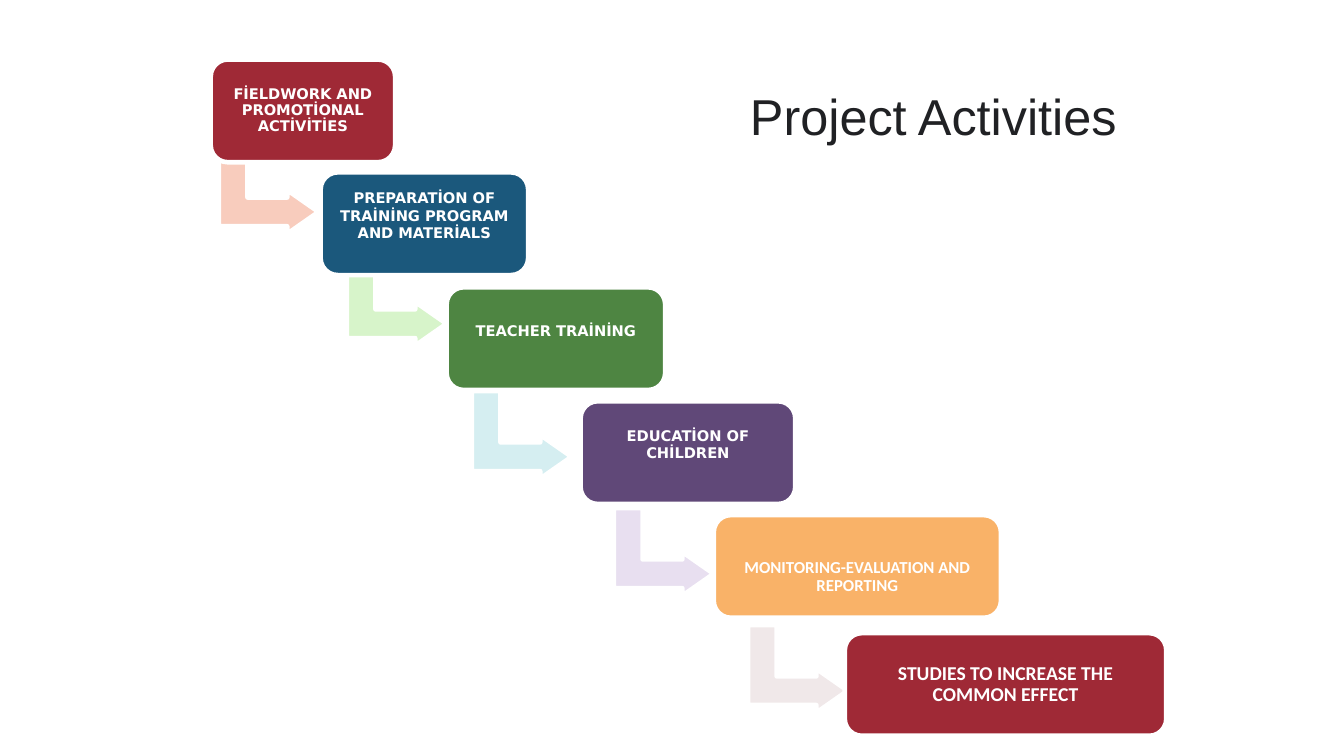
from pptx import Presentation
from pptx import util as u
from pptx.dml.color import RGBColor
from pptx.enum import shapes, text

COLORS = {
    "white": "FFFFFF", "title": "202124",
    "red": "9F2936", "blue": "1B587C", "green": "4E8542",
    "purple": "604878", "orange": "F9B268",
    "pale red": "F8CCBD", "pale green": "D7F4CA", "pale blue": "D5EEF1",
    "pale purple": "E8DFF0", "pale grey": "F0E8E9",
}
WIDE, NARROW = "DejaVu Sans", "Calibri"
STEP_HEIGHT = 73.4
ARROW_SIZE = (62.6, 71.3)

# label, fill, (left, top, width), (font, size, line spacing), extra inset (top, bottom)
STEPS = [
    ("FİELDWORK AND PROMOTİONAL ACTİVİTİES", "red",
     (150.5, 42.5, 131.8), (WIDE, 10.5, 0.9), (0, 0)),
    ("PREPARATİON OF TRAİNİNG PROGRAM AND MATERİALS", "blue",
     (229, 123.1, 148.3), (WIDE, 10.5, 1), (0, 12)),
    ("TEACHER TRAİNİNG", "green",
     (319, 205.2, 156.2), (WIDE, 10.5, 1), (0, 12)),
    ("EDUCATİON OF CHİLDREN", "purple",
     (414.7, 286.6, 153.4), (WIDE, 10.5, 1), (0, 12)),
    ("MONITORING-EVALUATION AND REPORTING", "orange",
     (509.8, 367.9, 205.2), (NARROW, 12, 0.9), (15, 0)),
    ("STUDIES TO INCREASE THE COMMON EFFECT", "red",
     (603.4, 452.2, 229.7), (NARROW, 14, 0.9), (0, 0)),
]
# fill, left, top before the quarter turn
ARROWS = [
    ("pale red", 160.6, 100.1),
    ("pale green", 252, 180),
    ("pale blue", 341.3, 275),
    ("pale purple", 442.8, 358.6),
    ("pale grey", 538.6, 442.1),
]


class StaircaseSlide:
    def __init__(self, deck):
        self.slide = deck.slides.add_slide(deck.slide_layouts[5])

    def color(self, name):
        return RGBColor.from_string(COLORS[name])

    def style_run(self, paragraph, font, size, color, bold=False):
        for run in paragraph.runs:
            run.font.name = font
            run.font.size = u.Pt(size)
            run.font.bold = bold
            run.font.color.rgb = self.color(color)

    def title(self, wording, left, top, width, height):
        heading = self.slide.shapes.title
        heading.left, heading.top = u.Pt(left), u.Pt(top)
        heading.width, heading.height = u.Pt(width), u.Pt(height)
        frame = heading.text_frame
        frame.text = wording
        frame.word_wrap = True
        frame.auto_size = text.MSO_AUTO_SIZE.NONE
        frame.vertical_anchor = text.MSO_ANCHOR.TOP
        frame.paragraphs[0].alignment = text.PP_ALIGN.LEFT
        self.style_run(frame.paragraphs[0], "Arial", 36, "title")

    def block(self, kind, fill, left, top, width, height):
        block = self.slide.shapes.add_shape(
            kind, u.Pt(left), u.Pt(top), u.Pt(width), u.Pt(height))
        block.shadow.inherit = False
        block.fill.solid()
        block.fill.fore_color.rgb = self.color(fill)
        block.line.color.rgb = self.color("white")
        block.line.width = u.Pt(3.35)
        return block

    def arrow(self, fill, left, top):
        arrow = self.block(shapes.MSO_SHAPE.BENT_UP_ARROW, fill, left, top, *ARROW_SIZE)
        arrow.rotation = 90
        for index, value in enumerate((0.328, 0.25, 0.358)):
            arrow.adjustments[index] = value

    def step(self, label, fill, place, lettering, extra):
        font, size, spacing = lettering
        step = self.block(shapes.MSO_SHAPE.ROUNDED_RECTANGLE, fill, *place, STEP_HEIGHT)
        frame = step.text_frame
        frame.text = label
        frame.word_wrap = True
        frame.vertical_anchor = text.MSO_ANCHOR.MIDDLE
        frame.margin_left = frame.margin_right = u.Pt(3.6)
        frame.margin_top = u.Pt(3.6 + extra[0])
        frame.margin_bottom = u.Pt(3.6 + extra[1])
        paragraph = frame.paragraphs[0]
        paragraph.alignment = text.PP_ALIGN.CENTER
        paragraph.line_spacing = float(spacing)
        self.style_run(paragraph, font, size, "white", bold=True)


def main():
    deck = Presentation()
    deck.slide_width, deck.slide_height = u.Pt(960), u.Pt(540)
    activities = StaircaseSlide(deck)

    # Heading
    activities.title("Project Activities", 528.5, 56.9, 280.8, 72.7)

    # Staircase: each arrow lies behind the step it leaves
    for index, step in enumerate(STEPS):
        if index < len(ARROWS):
            activities.arrow(*ARROWS[index])
        activities.step(*step)

    deck.save("out.pptx")


if __name__ == "__main__":
    main()
